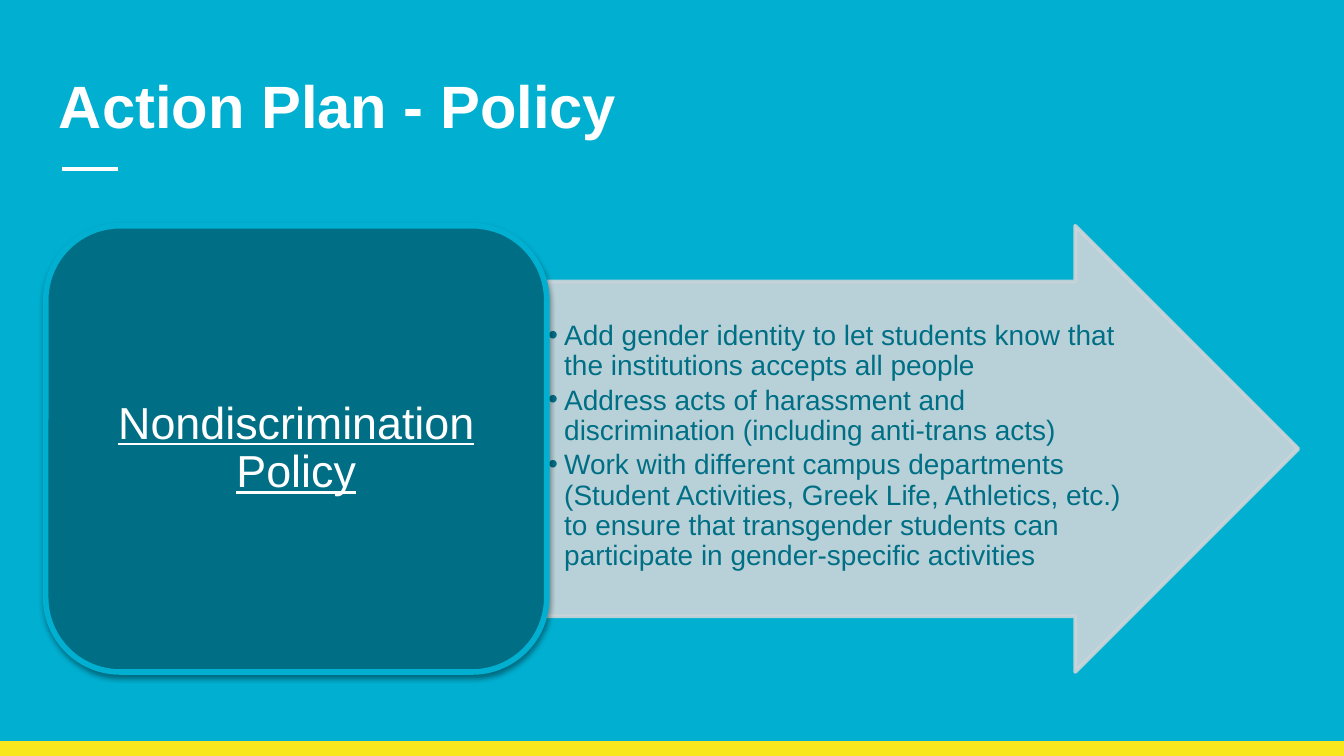
from lxml.etree import SubElement as Sub
from pptx import Presentation
from pptx.dml.color import RGBColor as Rgb
from pptx.enum.shapes import MSO_CONNECTOR as Conn, MSO_SHAPE as Kind
from pptx.enum.text import MSO_ANCHOR as Anchor, PP_ALIGN as Align
from pptx.oxml.ns import qn
from pptx.util import Inches, Pt

# Content
TITLE = "Action Plan - Policy"
TOPIC = "Nondiscrimination Policy"
STEPS = [
    "Add gender identity to let students know that the institutions accepts all people",
    "Address acts of harassment and discrimination (including anti-trans acts)",
    "Work with different campus departments (Student Activities, Greek Life, "
    "Athletics, etc.) to ensure that transgender students can participate in "
    "gender-specific activities",
]

THEME = {
    "font": "Arial", "back": "01AFD1", "white": "FFFFFF", "strip": "F8E71C",
    "arrow": "CCD5D9", "deep": "006F85",
    "title": 32, "topic": 24, "step": 15,
}

# Layout in inches: a 16:9 page; the card takes 40 % of the width, the arrow the rest
WIDE = 10
HIGH = WIDE * 9 / 16
LEFT, TOP, SPAN, TALL = 0.34, 1.68, 9.32, 3.32
CARD = SPAN * 0.4
MID = LEFT + CARD
STRIP = 0.11


def tint(name):
    return Rgb.from_string(THEME[name])


def add_box(kind, box, fill, line=None, width=0):
    shape = slide.shapes.add_shape(kind, *map(Inches, box))
    shape.shadow.inherit = False
    shape.fill.solid()
    shape.fill.fore_color.rgb = tint(fill)
    if line:
        shape.line.color.rgb = tint(line)
        shape.line.width = Pt(width)
    else:
        shape.line.fill.background()
    return shape


def add_text(box, inset):
    frame = slide.shapes.add_textbox(*map(Inches, box)).text_frame
    frame.word_wrap = True
    frame.margin_left = frame.margin_right = Inches(inset)
    frame.margin_top = frame.margin_bottom = Inches(inset)
    return frame


def add_run(para, text, size, color):
    run = para.add_run()
    run.text = text
    run.font.name = THEME["font"]
    run.font.size = Pt(THEME[size])
    run.font.color.rgb = tint(color)
    return run


deck = Presentation()
deck.slide_width, deck.slide_height = Inches(WIDE), Inches(HIGH)
slide = deck.slides.add_slide(deck.slide_layouts[6])
slide.background.fill.solid()
slide.background.fill.fore_color.rgb = tint("back")

# Bottom strip and title rule
add_box(Kind.RECTANGLE, (0, HIGH - STRIP, WIDE, STRIP), "strip")
rule = slide.shapes.add_connector(
    Conn.STRAIGHT, *map(Inches, (0.46, 1.26, 0.88, 1.26)))
rule.line.color.rgb = tint("white")
rule.line.width = Pt(2.25)
Sub(rule._element.spPr, qn("a:effectLst"))

# Title
head = add_text((LEFT, 0.42, SPAN, 0.71), 0.1)
head.vertical_anchor = Anchor.MIDDLE
add_run(head.paragraphs[0], TITLE, "title", "white").font.bold = True

# Arrow, slightly see-through
arrow = add_box(Kind.RIGHT_ARROW, (MID, TOP, SPAN - CARD, TALL), "arrow", "arrow", 2)
arrow.adjustments[0] = 0.75
arrow.adjustments[1] = 0.5
for color in arrow._element.spPr.iter(qn("a:srgbClr")):
    Sub(color, qn("a:alpha"), val="90000")

# Bulleted steps
body = add_text((MID, 2.38, 4.35, 2.21), 0.01)
for i, step in enumerate(STEPS):
    para = body.add_paragraph() if i else body.paragraphs[0]
    para.line_spacing = 0.9
    para.space_after = Pt(2.25)
    props = para._p.get_or_add_pPr()
    props.set("marL", str(Inches(0.12)))
    props.set("indent", str(-Inches(0.12)))
    Sub(props, qn("a:buFont"), typeface=THEME["font"])
    Sub(props, qn("a:buChar"), char="•")
    add_run(para, step, "step", "deep")

# Topic card with its soft shadow
card = add_box(Kind.ROUNDED_RECTANGLE, (LEFT, TOP, CARD, TALL), "deep", "back", 3)
glow = Sub(card._element.spPr.find(qn("a:effectLst")), qn("a:outerShdw"),
           blurRad=str(Pt(3.1)), dist=str(Pt(1.6)), dir="5400000", rotWithShape="0")
Sub(Sub(glow, qn("a:srgbClr"), val="000000"), qn("a:alpha"), val="38000")
card.text_frame.word_wrap = True
card.text_frame.vertical_anchor = Anchor.MIDDLE
para = card.text_frame.paragraphs[0]
para.alignment = Align.CENTER
para.line_spacing = 0.9
add_run(para, TOPIC, "topic", "white").font.underline = True

deck.save("out.pptx")
